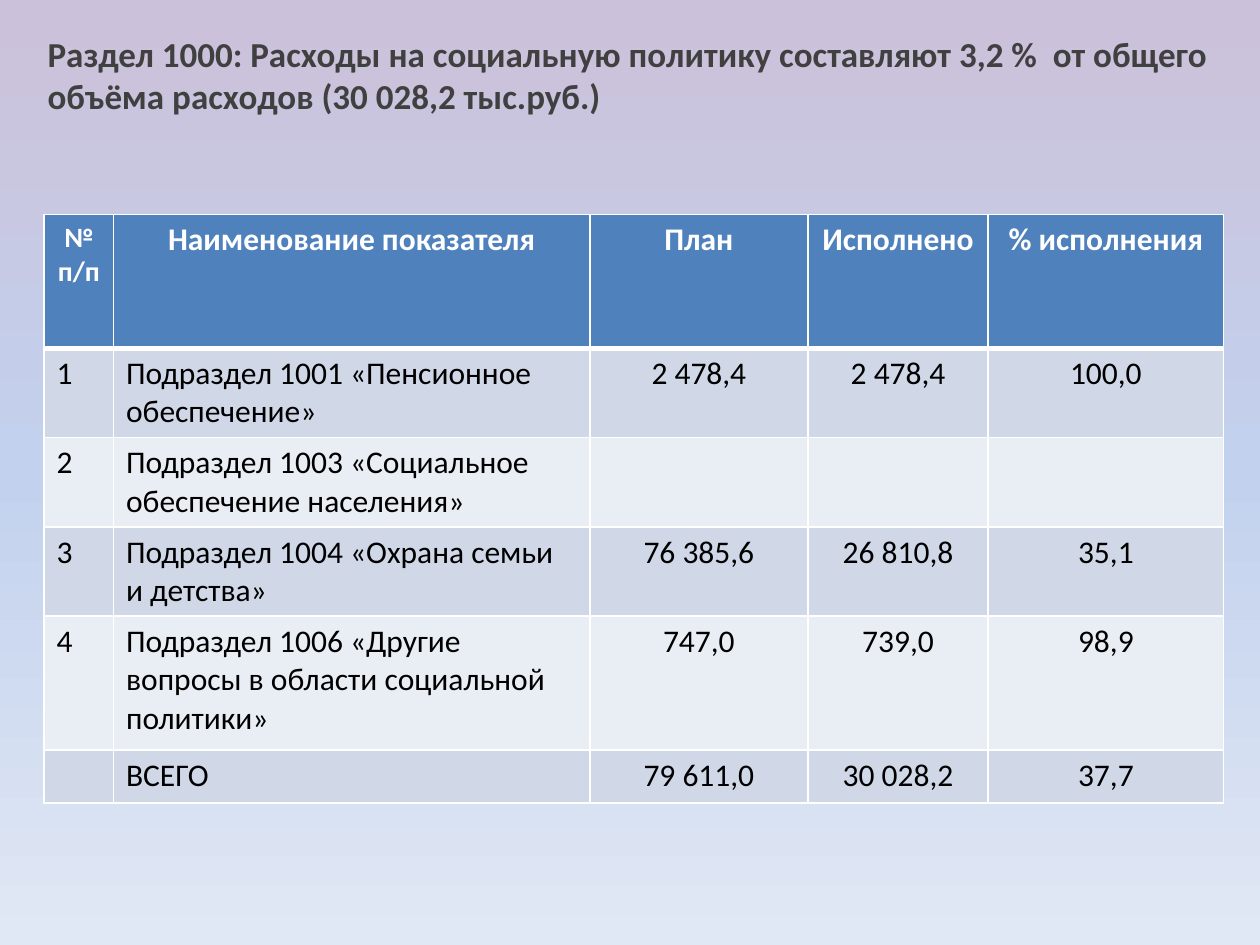
"""Build the slide on social policy spending with its table of plan and execution."""
from copy import deepcopy
from dataclasses import dataclass

from lxml import etree
from pptx import Presentation
from pptx.dml.color import RGBColor
from pptx.enum.text import PP_ALIGN
from pptx.oxml.ns import qn
from pptx.slide import Slide
from pptx.table import _Cell
from pptx.text.text import TextFrame
from pptx.util import Cm, Pt

LEFT, CENTER = PP_ALIGN.LEFT, PP_ALIGN.CENTER
FONT = "Calibri"
WHITE = RGBColor(0xFF, 0xFF, 0xFF)
BLACK = RGBColor(0x00, 0x00, 0x00)
DARK_GREY = RGBColor(0x40, 0x40, 0x40)
HEADER_BLUE = RGBColor(0x4F, 0x81, 0xBD)
BANDS = (RGBColor(0xD0, 0xD8, 0xE8), RGBColor(0xE9, 0xED, 0xF4))
BACKGROUND = (
    RGBColor(0xCC, 0xC1, 0xDA),
    RGBColor(0xC2, 0xD1, 0xED),
    RGBColor(0xE1, 0xE8, 0xF5),
)
TITLE = (
    "Раздел 1000: Расходы на социальную политику составляют 3,2 %  от общего "
    "объёма расходов (30 028,2 тыс.руб.)"
)
HEADINGS = ("№ п/п", "Наименование показателя", "План", "Исполнено", "% исполнения")
COLUMN_WIDTHS = (1.4, 9.6, 4.4, 3.63, 4.75)
HEADER_HEIGHT = 2.7


@dataclass(frozen=True)
class Expense:
    number: str
    name: str
    plan: str
    executed: str
    percent: str
    height: float = 1.8

    @property
    def values(self) -> tuple[str, ...]:
        return self.number, self.name, self.plan, self.executed, self.percent


EXPENSES = (
    Expense("1", "Подраздел 1001 «Пенсионное обеспечение»", "2 478,4", "2 478,4", "100,0"),
    Expense("2", "Подраздел 1003 «Социальное обеспечение населения»", "", "", ""),
    Expense("3", "Подраздел 1004 «Охрана семьи и детства»", "76 385,6", "26 810,8", "35,1"),
    Expense(
        "4", "Подраздел 1006 «Другие вопросы в области социальной политики»",
        "747,0", "739,0", "98,9", height=2.7,
    ),
    Expense("", "ВСЕГО", "79 611,0", "30 028,2", "37,7", height=1.07),
)


def write_text(
    frame: TextFrame, text: str, *, size: int = 18, color: RGBColor = BLACK,
    bold: bool = False, align: PP_ALIGN = LEFT,
) -> None:
    para = frame.paragraphs[0]
    para.alignment = align
    para.font.size = Pt(size)
    if not text:
        return
    span = para.add_run()
    span.text = text
    span.font.name = FONT
    span.font.size = Pt(size)
    span.font.bold = bold
    span.font.color.rgb = color


def paint_background(slide: Slide) -> None:
    fill = slide.background.fill
    fill.gradient()
    fill.gradient_angle = 270
    stop_list = next(slide.element.iter(qn("a:gsLst")))
    stop_list.append(deepcopy(stop_list[0]))
    last = len(BACKGROUND) - 1
    for index, (stop, color) in enumerate(zip(fill.gradient_stops, BACKGROUND)):
        stop.position = index / last
        stop.color.rgb = color


def style_cell(cell: _Cell, fill: RGBColor, *, top: int = 1, bottom: int = 1) -> None:
    cell.fill.solid()
    cell.fill.fore_color.rgb = fill
    properties = cell.fill._xPr
    sides = (("a:lnL", 1), ("a:lnR", 1), ("a:lnT", top), ("a:lnB", bottom))
    for index, (side, width) in enumerate(sides):
        line = etree.Element(qn(side), w=str(Pt(width)))
        solid = etree.SubElement(line, qn("a:solidFill"))
        etree.SubElement(solid, qn("a:srgbClr"), val=str(WHITE))
        properties.insert(index, line)


def add_title(slide: Slide) -> None:
    box = slide.shapes.add_textbox(Cm(0.71), Cm(0.53), Cm(24), Cm(1.4))
    box.text_frame.word_wrap = True
    write_text(box.text_frame, TITLE, size=20, color=DARK_GREY, bold=True)


def add_expense_table(slide: Slide) -> None:
    heights = (HEADER_HEIGHT, *(expense.height for expense in EXPENSES))
    table = slide.shapes.add_table(
        len(heights), len(COLUMN_WIDTHS), Cm(0.89), Cm(4.32),
        Cm(sum(COLUMN_WIDTHS)), Cm(sum(heights)),
    ).table
    for column, width in zip(table.columns, COLUMN_WIDTHS):
        column.width = Cm(width)
    for row, height in zip(table.rows, heights):
        row.height = Cm(height)
    for index, heading in enumerate(HEADINGS):
        cell = table.cell(0, index)
        style_cell(cell, HEADER_BLUE, bottom=3)
        write_text(
            cell.text_frame, heading, size=18 if index else 16,
            color=WHITE, bold=True, align=CENTER,
        )
    for row_index, expense in enumerate(EXPENSES, start=1):
        for index, value in enumerate(expense.values):
            cell = table.cell(row_index, index)
            style_cell(cell, BANDS[(row_index - 1) % 2], top=3 if row_index == 1 else 1)
            write_text(cell.text_frame, value, align=CENTER if index > 1 else LEFT)


def main() -> None:
    deck = Presentation()
    deck.slide_width, deck.slide_height = Cm(25.4), Cm(19.05)
    page = deck.slides.add_slide(deck.slide_layouts[6])
    paint_background(page)
    add_title(page)
    add_expense_table(page)
    deck.save("out.pptx")


if __name__ == "__main__":
    main()
